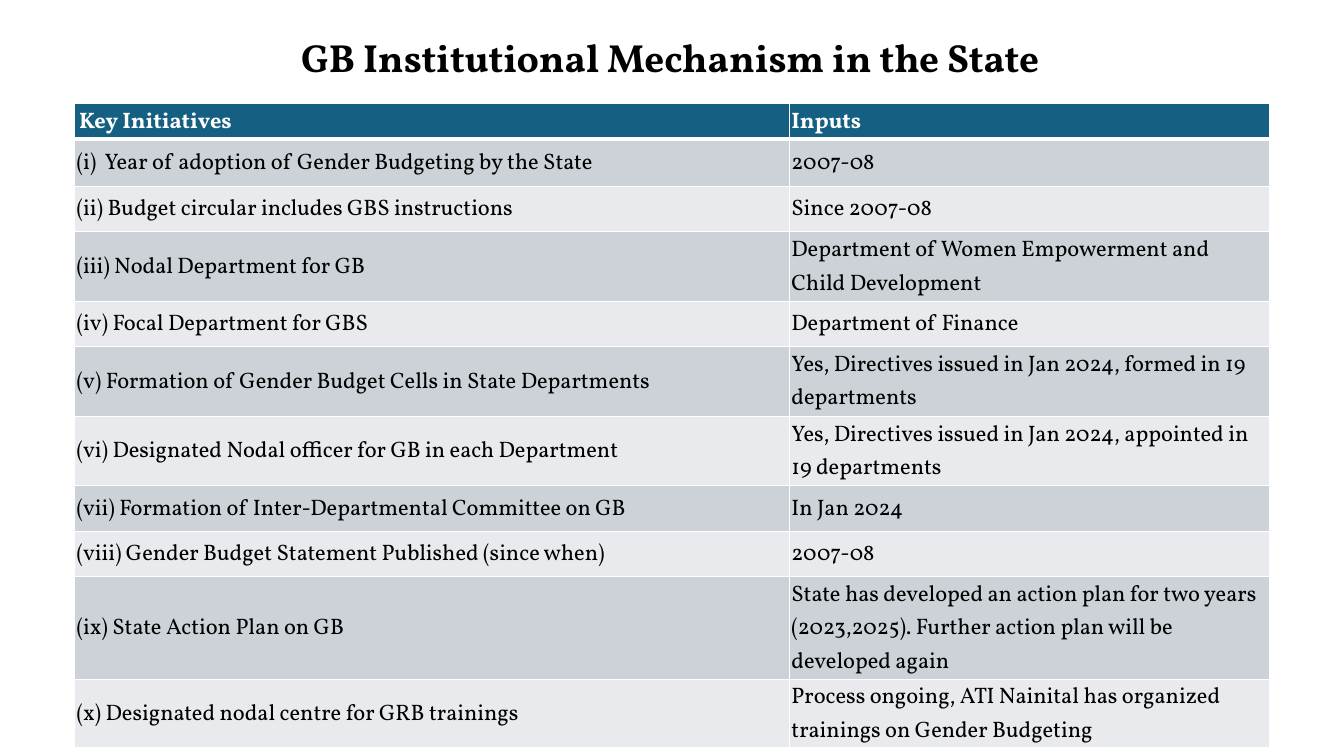
from lxml import etree
from pptx import Presentation
from pptx.dml.color import RGBColor
from pptx.enum.text import MSO_ANCHOR, PP_ALIGN
from pptx.oxml.ns import qn
from pptx.util import Emu, Pt

MIDDLE = MSO_ANCHOR.MIDDLE
CENTER = PP_ALIGN.CENTER
LEFT = PP_ALIGN.LEFT

ROWS = [
    (" Key Initiatives", "Inputs"),
    ("(i)  Year of adoption of Gender Budgeting by the State", "2007-08"),
    ("(ii) Budget circular includes GBS instructions", "Since 2007-08"),
    ("(iii) Nodal Department for GB",
     "Department of Women Empowerment and Child Development"),
    ("(iv) Focal Department for GBS", "Department of Finance"),
    ("(v) Formation of Gender Budget Cells in State Departments",
     "Yes, Directives issued in Jan 2024, formed in 19 departments"),
    ("(vi) Designated Nodal officer for GB in each Department",
     "Yes, Directives issued in Jan 2024, appointed in 19 departments"),
    ("(vii) Formation of Inter-Departmental Committee on GB", "In Jan 2024"),
    ("(viii) Gender Budget Statement Published (since when)", "2007-08"),
    ("(ix) State Action Plan on GB",
     "State has developed an action plan for two years (2023,2025). "
     "Further action plan will be developed again"),
    ("(x) Designated nodal centre for GRB trainings",
     "Process ongoing, ATI Nainital has organized trainings on Gender Budgeting"),
]
WIDTHS = [709, 476]
HEIGHTS = [35, 47, 45, 69, 45, 69, 69, 45, 45, 102, 68]


def px(n):
    return Emu(n * 9144)


def color(code):
    return RGBColor.from_string(code)


class Deck:
    font = "Vollkorn"
    white = "FFFFFF"
    black = "000000"
    head = "156082"
    bands = ("CCD2D8", "E8EAED")

    def __init__(self, width, height):
        self.file = Presentation()
        self.file.slide_width = px(width)
        self.file.slide_height = px(height)
        self.slide = self.file.slides.add_slide(self.file.slide_layouts[6])

    def style(self, frame, text, size, ink, bold, align, space, after):
        frame.text = text
        para = frame.paragraphs[0]
        para.alignment = align
        para.line_spacing = space
        para.space_after = Pt(after)
        font = para.runs[0].font
        font.name = self.font
        font.size = Pt(size)
        font.bold = bold
        font.color.rgb = color(ink)

    def title(self, text, x, y, w, h):
        box = self.slide.shapes.add_textbox(px(x), px(y), px(w), px(h))
        frame = box.text_frame
        frame.word_wrap = True
        frame.vertical_anchor = MIDDLE
        self.style(frame, text, 28, self.black, True, CENTER, 0.9, 0)

    def border(self, cell, side, width):
        props = cell._tc.get_or_add_tcPr()
        line = etree.SubElement(props, qn("a:ln" + side), w=str(Pt(width)))
        fill = etree.SubElement(line, qn("a:solidFill"))
        etree.SubElement(fill, qn("a:srgbClr"), val=self.white)

    def cell(self, cell, text, row, col):
        top = row == 0
        sides = {"L": 1, "R": 1, "T": 3 if row == 1 else 1, "B": 3 if top else 1}
        for side, width in sides.items():
            self.border(cell, side, width)
        cell.fill.solid()
        cell.fill.fore_color.rgb = color(self.head if top else self.bands[(row - 1) % 2])
        cell.vertical_anchor = MIDDLE
        flush = top and col == 0
        cell.margin_left = cell.margin_right = px(0 if flush else 2)
        cell.margin_top = cell.margin_bottom = px(0 if flush else 1)
        ink = self.white if top else self.black
        self.style(cell.text_frame, text, 16, ink, top, LEFT, 1.07, 8)

    def table(self, rows, widths, heights, x, y):
        frame = self.slide.shapes.add_table(
            len(rows), len(widths), px(x), px(y), px(sum(widths)), px(sum(heights)))
        table = frame.table
        for col, width in zip(table.columns, widths):
            col.width = px(width)
        for row, height in zip(table.rows, heights):
            row.height = px(height)
        for r, texts in enumerate(rows):
            for c, text in enumerate(texts):
                self.cell(table.cell(r, c), text, r, c)


def main():
    deck = Deck(1333, 750)
    deck.title("GB Institutional Mechanism in the State", -4, 16, 1337, 87)
    deck.table(ROWS, WIDTHS, HEIGHTS, 74, 103)
    deck.file.save("out.pptx")


if __name__ == "__main__":
    main()
